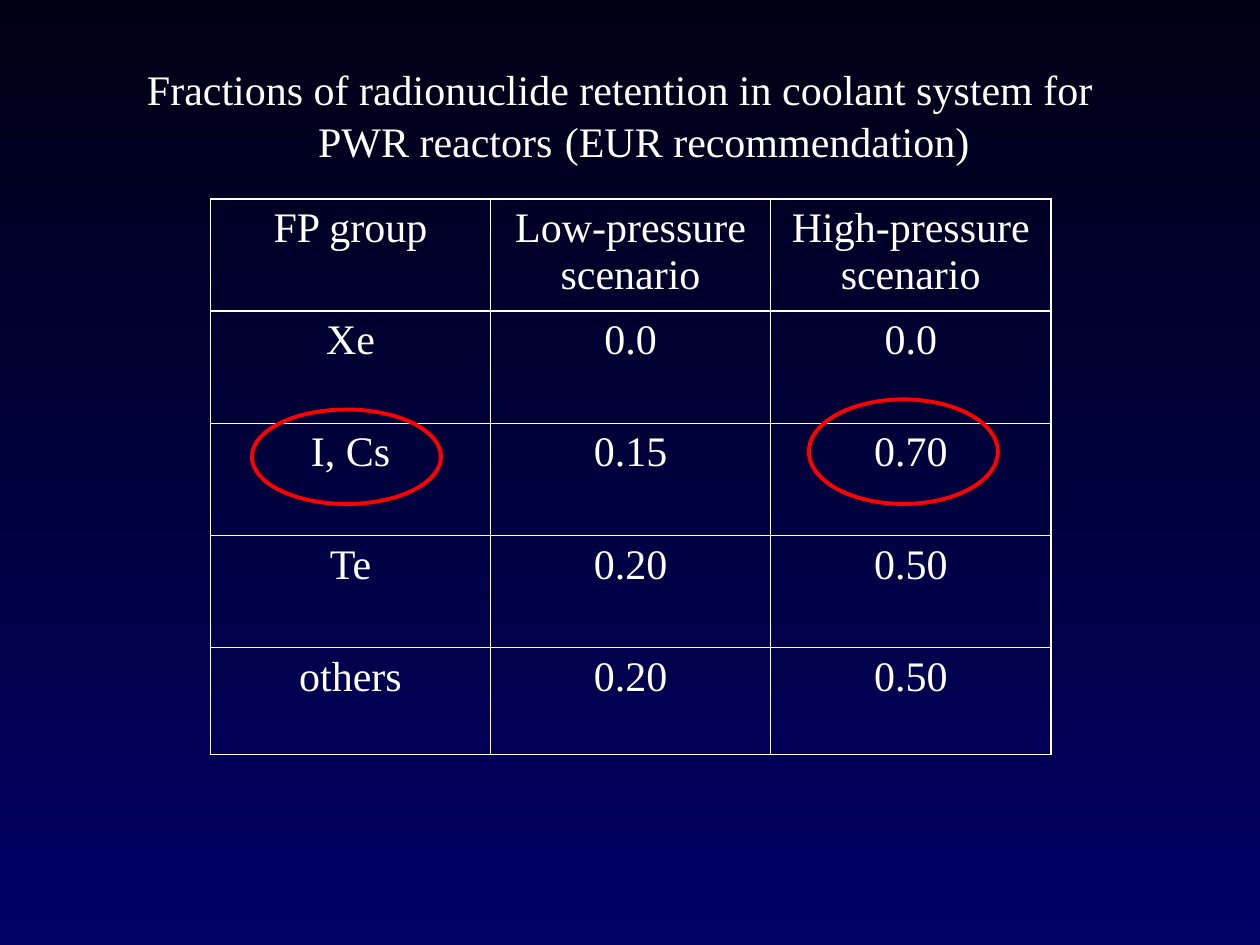
"""Build a slide with a table of radionuclide retention fractions for PWR reactors."""
from lxml import etree
from pptx import Presentation
from pptx import util as u
from pptx.dml.color import RGBColor
from pptx.enum import shapes, text
from pptx.oxml.ns import qn

COLORS = {"top": "000014", "bottom": "000066", "white": "FFFFFF", "red": "FF0000"}
FONT = "Times New Roman"
ROWS = [
    ("FP group", "Low-pressure scenario", "High-pressure scenario"),
    ("Xe", "0.0", "0.0"),
    ("I, Cs", "0.15", "0.70"),
    ("Te", "0.20", "0.50"),
    ("others", "0.20", "0.50"),
]
ROW_HEIGHTS = [0.89] * 4 + [0.85]


def format_paragraph(para, sizes):
    para.alignment = text.PP_ALIGN.CENTER
    para.space_before = u.Pt(4.8)
    for span, size in zip(para.runs, sizes):
        span.font.name = FONT
        span.font.size = u.Pt(size)
        span.font.bold = False
        span.font.color.rgb = RGBColor.from_string(COLORS["white"])


def add_borders(cell):
    properties = cell._tc.get_or_add_tcPr()
    for position, side in enumerate(("lnL", "lnR", "lnT", "lnB")):
        line = etree.Element(qn(f"a:{side}"), w=str(u.Pt(1)))
        fill = etree.SubElement(line, qn("a:solidFill"))
        etree.SubElement(fill, qn("a:srgbClr"), val=COLORS["white"])
        properties.insert(position, line)


deck = Presentation()
deck.slide_width, deck.slide_height = u.Inches(10), u.Inches(7.5)
page = deck.slides.add_slide(deck.slide_layouts[5])

backdrop = page.background.fill
backdrop.gradient()
backdrop.gradient_angle = 270
for stop, name in zip(backdrop.gradient_stops, ("top", "bottom")):
    stop.color.rgb = RGBColor.from_string(COLORS[name])
    stop.position = 0 if name == "top" else 1

title = page.shapes.title
title.left, title.top = u.Inches(0.67), u.Inches(0.5)
title.width, title.height = u.Inches(8.5), u.Inches(0.67)
frame = title.text_frame
frame.word_wrap = True
frame.auto_size = text.MSO_AUTO_SIZE.NONE
frame.vertical_anchor = text.MSO_ANCHOR.TOP
para = frame.paragraphs[0]
for words in ("Fractions of radionuclide retention in coolant system for PWR reactors",
              " ", "(EUR recommendation)"):
    para.add_run().text = words
format_paragraph(para, (24, 28, 24))
para.line_spacing = 0.9
indent = para._p.get_or_add_pPr()
indent.set("marL", str(u.Inches(0.38)))
indent.set("indent", str(u.Inches(-0.38)))

table = page.shapes.add_table(
    len(ROWS), len(ROWS[0]), u.Inches(1.67), u.Inches(1.58),
    u.Inches(6.67), u.Inches(sum(ROW_HEIGHTS))).table
table.first_row = table.horz_banding = False
for row, height, labels in zip(table.rows, ROW_HEIGHTS, ROWS):
    row.height = u.Inches(height)
    for cell, label in zip(row.cells, labels):
        cell.text_frame.text = label
        format_paragraph(cell.text_frame.paragraphs[0], (24,))
        cell.fill.background()
        add_borders(cell)

for left, top, height in ((2, 3.25, 0.75), (6.42, 3.17, 0.83)):
    ring = page.shapes.add_shape(
        shapes.MSO_SHAPE.OVAL, u.Inches(left), u.Inches(top), u.Inches(1.5), u.Inches(height))
    ring.shadow.inherit = False
    ring.fill.background()
    ring.line.color.rgb = RGBColor.from_string(COLORS["red"])
    ring.line.width = u.Pt(2.25)

deck.save("out.pptx")
